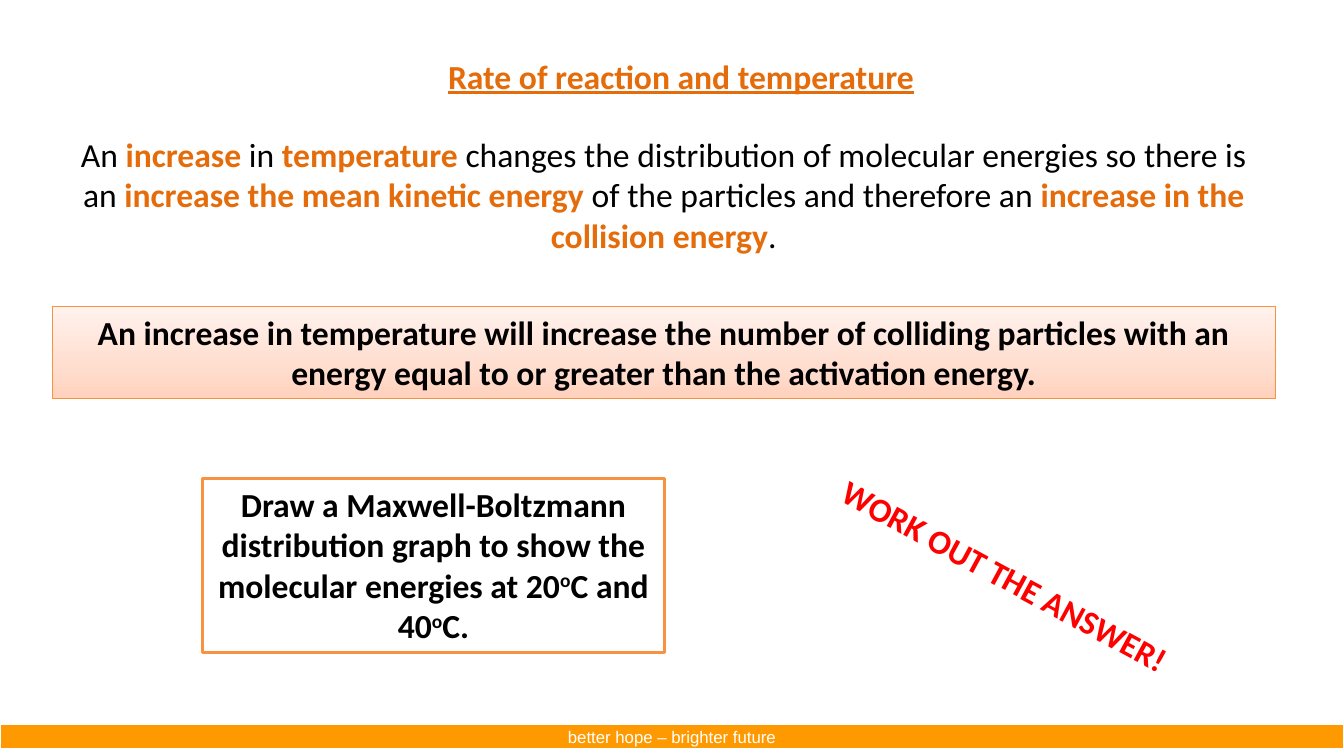
import copy
import pptx
import pptx.util
import pptx.dml.color
import pptx.enum.shapes
import pptx.enum.text
import pptx.oxml.ns

Pt = pptx.util.Pt
ORANGE, EDGE, BLACK, WHITE, RED = "E46C0A", "F69240", "000000", "FFFFFF", "FF0000"
LEFT, WIDTH = 37.44, 873.36  # shared by the statement and the key point

PLAIN = {"color": BLACK}
BOLD = {"color": BLACK, "bold": True}
KEY = {"color": ORANGE, "bold": True}
RAISED = {**BOLD, "baseline": 30000}


def rgb(value):
    return pptx.dml.color.RGBColor.from_string(value)


class Deck:
    """Holds the text style and the current slide."""

    style = {"name": "Calibri", "size": Pt(24), "bold": False}

    def __init__(self, width, height):
        self.prs = pptx.Presentation()
        self.prs.slide_width, self.prs.slide_height = Pt(width), Pt(height)
        self.s = self.prs.slides.add_slide(self.prs.slide_layouts[5])

    def add_runs(self, sp, runs, anchor="TOP"):
        tf = sp.text_frame
        frame = {
            "word_wrap": True,
            "auto_size": pptx.enum.text.MSO_AUTO_SIZE.NONE,
            "vertical_anchor": pptx.enum.text.MSO_ANCHOR[anchor],
        }
        for key, value in frame.items():
            setattr(tf, key, value)
        p = tf.paragraphs[0]
        p.alignment = pptx.enum.text.PP_ALIGN.CENTER
        for text, extra in runs:
            r = p.add_run()
            r.text = text
            for key, value in {**self.style, **extra}.items():
                if key == "color":
                    r.font.color.rgb = rgb(value)
                elif key == "baseline":
                    r._r.get_or_add_rPr().set("baseline", str(value))
                else:
                    setattr(r.font, key, value)

    def title(self, box, runs):
        sp = self.s.shapes.title
        for key, value in zip(("left", "top", "width", "height"), box):
            setattr(sp, key, Pt(value))
        self.add_runs(sp, runs)

    def text(self, box, runs, rotation=0):
        sp = self.s.shapes.add_textbox(*map(Pt, box))
        sp.rotation = rotation
        self.add_runs(sp, runs)

    def rect(self, box, runs, line, weight, fill=None, stops=None, anchor="TOP"):
        sp = self.s.shapes.add_shape(
            pptx.enum.shapes.MSO_SHAPE.RECTANGLE, *map(Pt, box))
        sp.shadow.inherit = False
        sp.line.color.rgb = rgb(line)
        sp.line.width = Pt(weight)
        if stops:
            self.gradient(sp, stops)
        elif fill:
            sp.fill.solid()
            sp.fill.fore_color.rgb = rgb(fill)
        else:
            sp.fill.background()
        self.add_runs(sp, runs, anchor)

    def gradient(self, sp, stops):
        sp.fill.gradient()
        sp.fill.gradient_angle = 90
        gs_list = sp._element.spPr.find(".//" + pptx.oxml.ns.qn("a:gsLst"))
        while len(gs_list) < len(stops):
            gs_list.append(copy.deepcopy(gs_list[0]))
        for stop, (position, color) in zip(sp.fill.gradient_stops, stops):
            stop.position = position
            stop.color.rgb = rgb(color)


def main():
    d = Deck(960, 540)

    # Footer band
    d.rect((0, 517, 960, 18),
           [("better hope – brighter future",
             {"name": "Arial", "size": Pt(12), "color": WHITE})],
           WHITE, 1.5, fill="FF9900", anchor="MIDDLE")

    # Title
    d.title((13, 36, 947, 269.28),
            [("Rate of reaction and temperature", {**KEY, "underline": True})])

    # Statement with key words
    d.text((LEFT, 92.16, WIDTH, 126.72), [
        ("An ", PLAIN),
        ("increase", KEY),
        (" in ", PLAIN),
        ("temperature", KEY),
        (" changes the distribution of molecular energies so there is an ", PLAIN),
        ("increase the mean kinetic energy ", KEY),
        ("of the particles and therefore an ", PLAIN),
        ("increase in the collision energy", KEY),
        (".", PLAIN),
    ])

    # Key point
    d.rect((LEFT, 218.88, WIDTH, 65.52),
           [("An increase in temperature will increase the number of colliding "
             "particles with an energy equal to or greater than the activation "
             "energy.", BOLD)],
           EDGE, 0.75,
           stops=[(0, "FFD2BD"), (0.35, "FFDED0"), (1, "FFF2ED")])

    # Task
    d.rect((144.72, 342, 329.76, 123.84), [
        ("Draw a Maxwell-Boltzmann distribution graph to show the molecular "
         "energies at 20", BOLD),
        ("o", RAISED),
        ("C and 40", BOLD),
        ("o", RAISED),
        ("C.", BOLD),
    ], EDGE, 2)

    # Slanted call
    d.text((579.6, 393.12, 276.48, 36),
           [("WORK OUT THE ANSWER!", {"color": RED, "bold": True})],
           rotation=28.4)

    d.prs.save("out.pptx")


if __name__ == "__main__":
    main()
